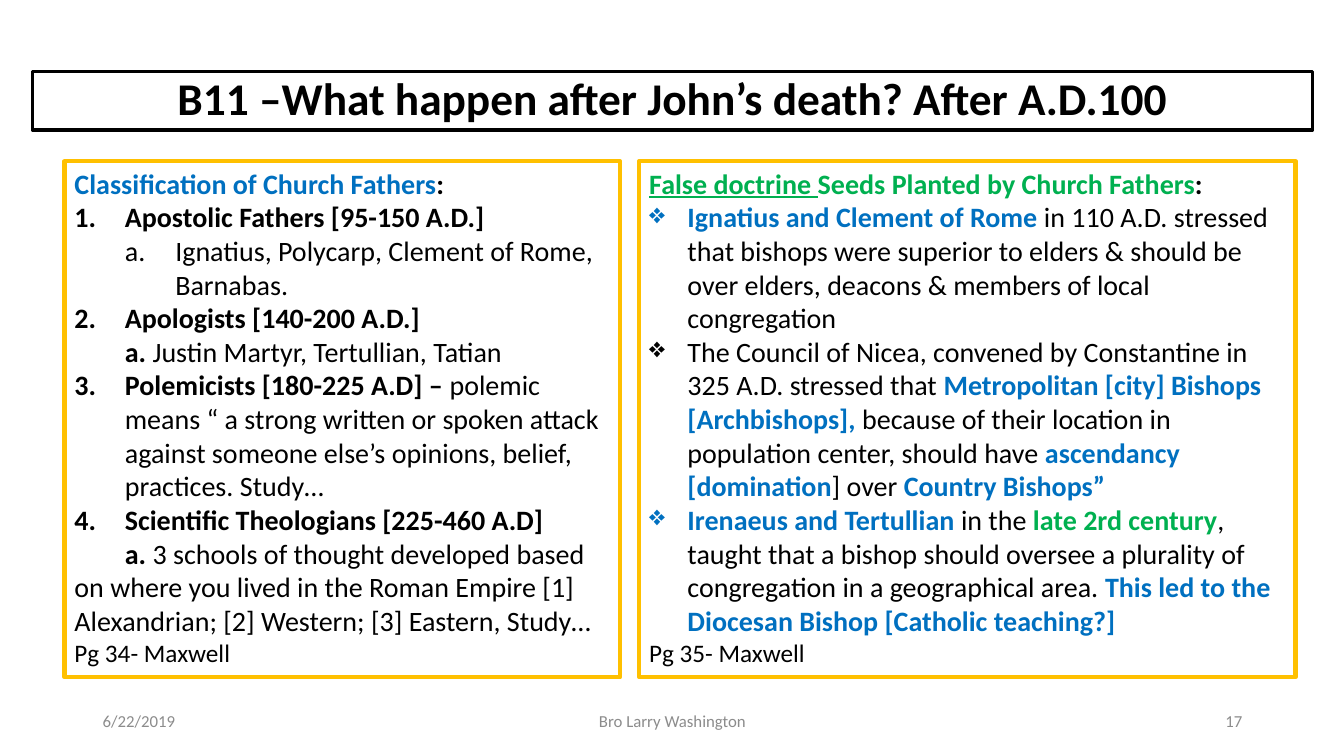
from lxml import etree
from pptx import Presentation
from pptx.dml.color import RGBColor
from pptx.enum import shapes, text
from pptx.oxml.ns import qn
from pptx.util import Inches, Pt

COLORS = {"black": "000000", "blue": "0070C0", "green": "00B050",
          "gold": "FFC000", "grey": "8C8C8C"}
FONT = "Calibri"

# Run formats
PLAIN = {"color": "black"}
BOLD = {"color": "black", "bold": True}
BLUE = {"color": "blue", "bold": True}
GREEN = {"color": "green", "bold": True}
UNDERLINED = {"color": "green", "bold": True, "underline": True}
SOURCE = {"color": "black", "size": 18}
FOOTER = {"color": "grey", "size": 12}
TITLE = {"color": "black", "size": 32.4, "bold": True}

# Paragraph formats: level, left margin, first-line indent, bullet tag and attributes
FLAT = (0, 0, 0, None)
FIRST_LINE = (0, 0, 0.5, None)
INDENTED = (1, 0.5, 0, None)
NUMBERED = (0, 0.5, -0.5, ("a:buAutoNum", {"type": "arabicPeriod"}))
LETTERED = (1, 1, -0.5, ("a:buAutoNum", {"type": "alphaLcPeriod"}))
DIAMOND = (0, 0.38, -0.38, ("a:buChar", {"char": "❖"}))

# Content
HEADLINE = "B11 –What happen after John’s death? After A.D.100"
CHURCH_FATHERS = [
    (FLAT, [("Classification of Church Fathers", BLUE), (":", BOLD)]),
    (NUMBERED, [("Apostolic Fathers [95-150 A.D.]", BOLD)]),
    (LETTERED, [("Ignatius, Polycarp, Clement of Rome, Barnabas.", PLAIN)]),
    (NUMBERED, [("Apologists [140-200 A.D.]", BOLD)]),
    (INDENTED, [("a. ", BOLD), ("Justin Martyr, Tertullian, Tatian", PLAIN)]),
    (NUMBERED, [("Polemicists [180-225 A.D] – ", BOLD),
                ("polemic means “ a strong written or spoken attack against "
                 "someone else’s opinions, belief, practices. Study…", PLAIN)]),
    (NUMBERED, [("Scientific Theologians [225-460 A.D]", BOLD)]),
    (FIRST_LINE, [("a. ", BOLD),
                  ("3 schools of thought developed based on where you lived in the Roman "
                   "Empire [1] Alexandrian; [2] Western; [3] Eastern, Study…", PLAIN)]),
    (FLAT, [("Pg 34- Maxwell", SOURCE)]),
]
FALSE_DOCTRINE = [
    (FLAT, [("False doctrine ", UNDERLINED),
            ("Seeds Planted by Church Fathers", GREEN), (":", BOLD)]),
    (DIAMOND, [("Ignatius and Clement of Rome ", BLUE),
               ("in 110 A.D. stressed that bishops were superior to elders & should be "
                "over elders, deacons & members of local congregation", PLAIN)]),
    (DIAMOND, [("The Council of Nicea, convened by Constantine in 325 A.D. "
                "stressed that ", PLAIN),
               ("Metropolitan [city] Bishops [Archbishops], ", BLUE),
               ("because of their location in population center, should have ", PLAIN),
               ("ascendancy [domination", BLUE), ("] over ", PLAIN),
               ("Country Bishops”", BLUE)]),
    (DIAMOND, [("Irenaeus and Tertullian ", BLUE), ("in the ", PLAIN),
               ("late 2rd century", GREEN),
               (", taught that a bishop should oversee a plurality of congregation "
                "in a geographical area. ", PLAIN),
               ("This led to the Diocesan Bishop [Catholic teaching?]", BLUE)]),
    (FLAT, [("Pg 35- Maxwell", SOURCE)]),
]
PANELS = [(0.64, 5.51, CHURCH_FATHERS), (6.34, 6.51, FALSE_DOCTRINE)]  # left, width
PANEL_TOP, PANEL_HEIGHT = 1.6, 5.12
FOOTERS = [  # left, width, alignment, wording
    (0.92, 3, text.PP_ALIGN.LEFT, "6/22/2019"),
    (4.42, 4.5, text.PP_ALIGN.CENTER, "Bro Larry Washington"),
    (9.42, 3, text.PP_ALIGN.RIGHT, "17"),
]


def color(name):
    return RGBColor.from_string(COLORS[name])


def add_run(paragraph, wording, style):
    run = paragraph.add_run()
    run.text = wording
    values = {"name": FONT, "size": Pt(style.get("size", 20)),
              "bold": style.get("bold", False),
              "underline": style.get("underline", False)}
    for name, value in values.items():
        setattr(run.font, name, value)
    run.font.color.rgb = color(style["color"])


def format_paragraph(paragraph, layout):
    level, margin, indent, bullet = layout
    paragraph.alignment = text.PP_ALIGN.LEFT
    paragraph.level = level
    properties = paragraph._p.get_or_add_pPr()
    properties.set("marL", str(Inches(margin)))
    properties.set("indent", str(Inches(indent)))
    tag, attributes = bullet or ("a:buNone", {})
    etree.SubElement(properties, qn(tag), attributes)


def outline(shape, name, width):
    shape.fill.background()
    shape.line.color.rgb = color(name)
    shape.line.width = Pt(width)


prs = Presentation()
prs.slide_width, prs.slide_height = Inches(13.33), Inches(7.5)
slide = prs.slides.add_slide(prs.slide_layouts[5])

# Title
title = slide.shapes.title
title.left, title.top, title.width, title.height = map(Inches, (0.32, 0.71, 12.7, 0.58))
outline(title, "black", 2.25)
title.text_frame.auto_size = text.MSO_AUTO_SIZE.NONE
title.text_frame.vertical_anchor = text.MSO_ANCHOR.BOTTOM
headline = title.text_frame.paragraphs[0]
headline.alignment = text.PP_ALIGN.CENTER
headline.line_spacing = 0.9
add_run(headline, HEADLINE, TITLE)

# Two framed panels
for left, width, paragraphs in PANELS:
    panel = slide.shapes.add_shape(
        shapes.MSO_SHAPE.RECTANGLE, Inches(left), Inches(PANEL_TOP),
        Inches(width), Inches(PANEL_HEIGHT))
    panel.shadow.inherit = False
    outline(panel, "gold", 3)
    frame = panel.text_frame
    frame.word_wrap = True
    frame.auto_size = text.MSO_AUTO_SIZE.SHAPE_TO_FIT_TEXT
    frame.vertical_anchor = text.MSO_ANCHOR.TOP
    for index, (layout, runs) in enumerate(paragraphs):
        paragraph = frame.add_paragraph() if index else frame.paragraphs[0]
        format_paragraph(paragraph, layout)
        for wording, style in runs:
            add_run(paragraph, wording, style)

# Date, author and slide number
for left, width, alignment, wording in FOOTERS:
    footer = slide.shapes.add_textbox(Inches(left), Inches(6.95), Inches(width), Inches(0.4))
    footer.text_frame.word_wrap = True
    footer.text_frame.vertical_anchor = text.MSO_ANCHOR.MIDDLE
    line = footer.text_frame.paragraphs[0]
    line.alignment = alignment
    add_run(line, wording, FOOTER)

prs.save("out.pptx")
